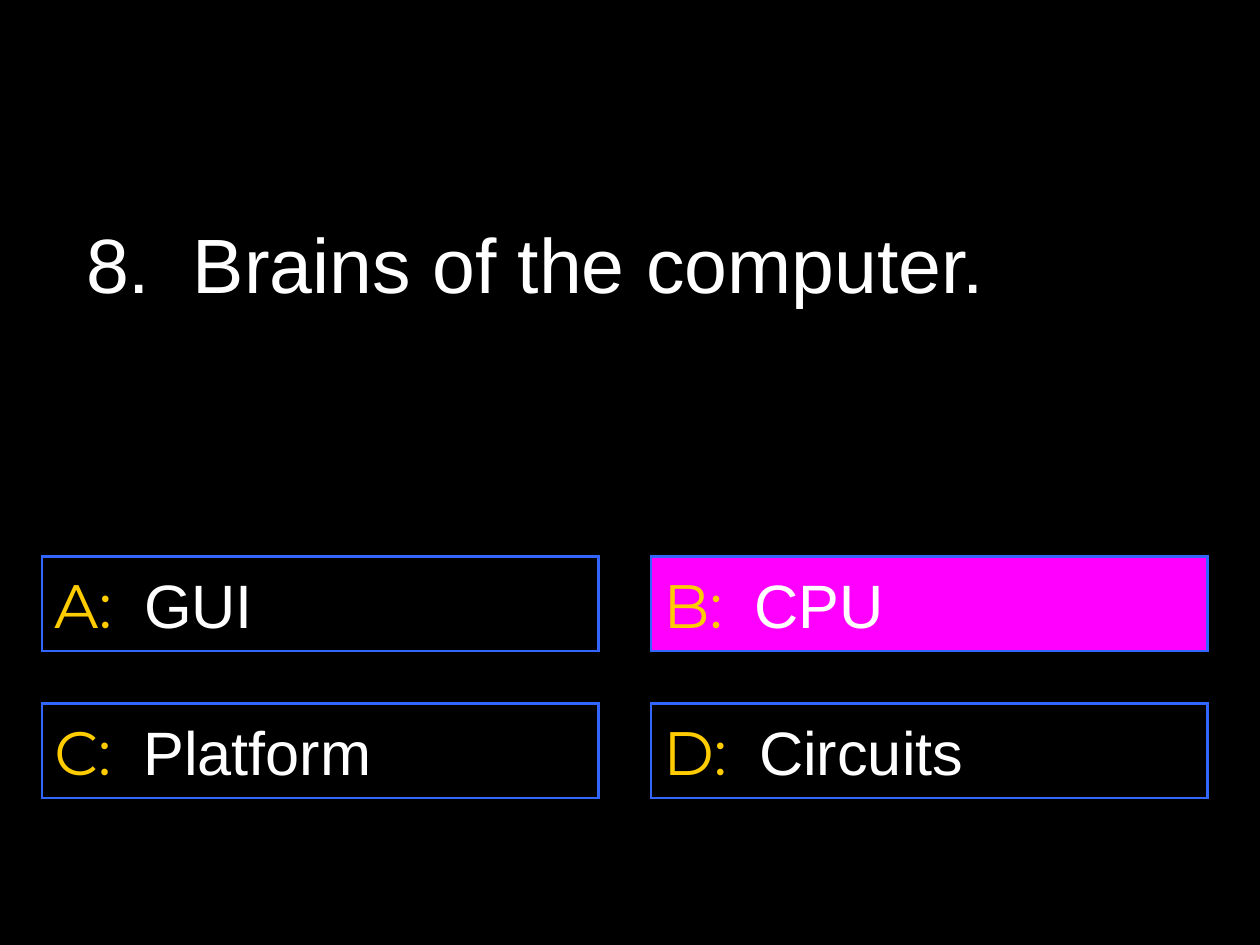
from dataclasses import dataclass

from lxml import etree
from pptx import Presentation
from pptx.dml.color import RGBColor
from pptx.enum import shapes, text
from pptx.oxml import ns
from pptx.util import Pt


@dataclass(frozen=True)
class Theme:
    back: str = "000000"
    edge: str = "3366FF"
    mark: str = "FFCC00"
    ink: str = "FFFFFF"
    right: str = "FF00FF"
    body: str = "Arial"
    label: str = "Montserrat"
    head: float = 44
    size: float = 35


@dataclass(frozen=True)
class Answer:
    key: str
    word: str
    col: int
    row: int
    right: bool = False


THEME = Theme()
LEFT, TOP = 24, 318
WIDTH, HEIGHT = 318, 54
STEP_X, STEP_Y = 348, 84

ANSWERS = [
    Answer("A", "GUI", 0, 0),
    Answer("B", "CPU", 1, 0, right=True),
    Answer("C", "Platform", 0, 1),
    Answer("D", "Circuits", 1, 1),
]


def add_run(para, words: str, font: str, size: float, color: str) -> None:
    run = para.add_run()
    run.text = words
    run.font.name = font
    run.font.size = Pt(size)
    run.font.color.rgb = RGBColor.from_string(color)


def set_alpha(shape, percent: int) -> None:
    """Make a solid fill see-through; percent is its opacity."""
    color = shape.element.spPr.find(ns.qn("a:solidFill"))[0]
    etree.SubElement(color, ns.qn("a:alpha"), val=str(percent * 1000))


def set_miter(shape) -> None:
    """Give the outline sharp corners."""
    line = shape.element.spPr.find(ns.qn("a:ln"))
    etree.SubElement(line, ns.qn("a:miter"), lim="800000")


def add_title(slide, words: str) -> None:
    title = slide.shapes.title
    title.left, title.top = Pt(42), Pt(24)
    title.width, title.height = Pt(618), Pt(252)
    frame = title.text_frame
    frame.auto_size = text.MSO_AUTO_SIZE.NONE
    frame.vertical_anchor = text.MSO_ANCHOR.MIDDLE
    para = frame.paragraphs[0]
    para.alignment = text.PP_ALIGN.LEFT
    add_run(para, words, THEME.body, THEME.head, THEME.ink)


def add_answer(slide, item: Answer) -> None:
    box = slide.shapes.add_shape(
        shapes.MSO_SHAPE.RECTANGLE,
        Pt(LEFT + item.col * STEP_X), Pt(TOP + item.row * STEP_Y),
        Pt(WIDTH), Pt(HEIGHT))
    box.shadow.inherit = False
    box.fill.solid()
    box.fill.fore_color.rgb = RGBColor.from_string(
        THEME.right if item.right else THEME.back)
    if not item.right:
        set_alpha(box, 50)
    box.line.color.rgb = RGBColor.from_string(THEME.edge)
    box.line.width = Pt(1.5)
    set_miter(box)
    frame = box.text_frame
    frame.word_wrap = False
    frame.vertical_anchor = text.MSO_ANCHOR.MIDDLE
    para = frame.paragraphs[0]
    para.alignment = text.PP_ALIGN.LEFT
    add_run(para, f"{item.key}:  ", THEME.label, THEME.size, THEME.mark)
    add_run(para, item.word, THEME.body, THEME.size, THEME.ink)


def main() -> None:
    deck = Presentation()
    deck.slide_width, deck.slide_height = Pt(720), Pt(540)
    slide = deck.slides.add_slide(deck.slide_layouts.get_by_name("Title Only"))
    fill = slide.background.fill
    fill.solid()
    fill.fore_color.rgb = RGBColor.from_string(THEME.back)
    add_title(slide, "8.  Brains of the computer.")
    for item in ANSWERS:
        add_answer(slide, item)
    deck.save("out.pptx")


if __name__ == "__main__":
    main()
